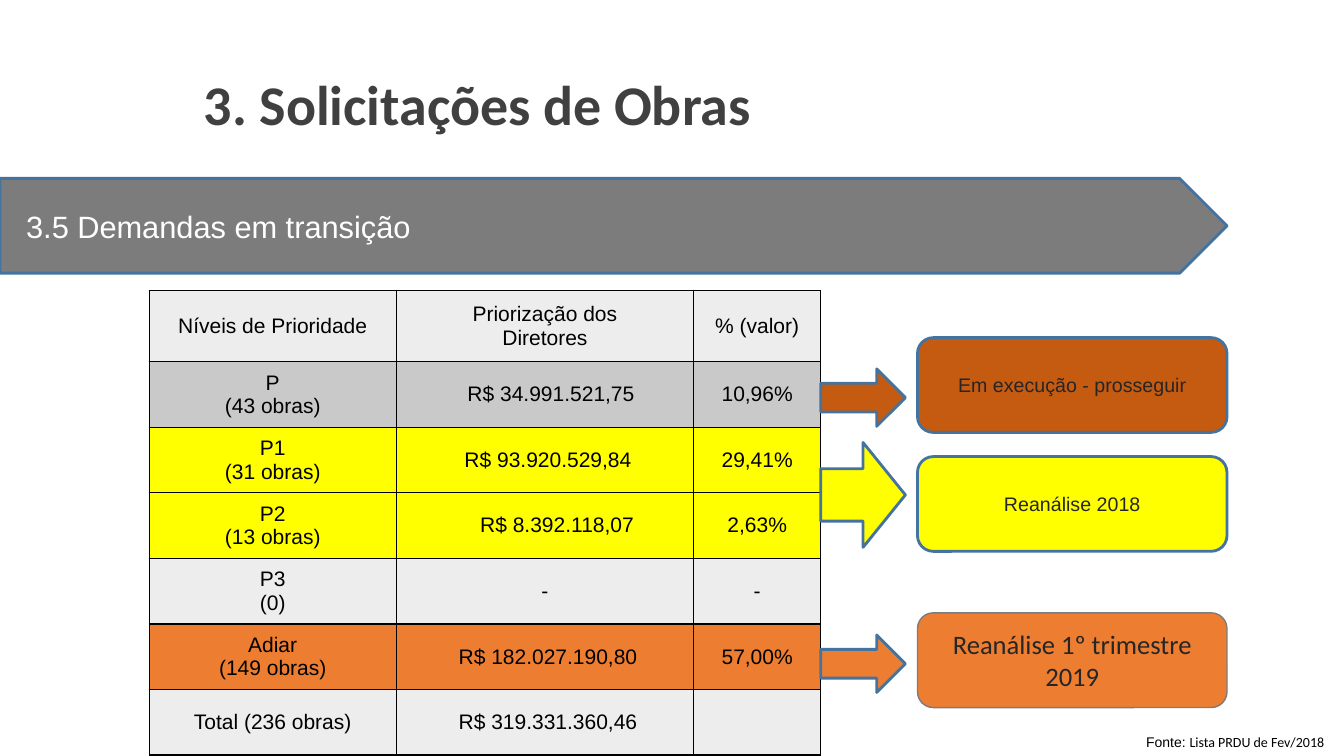
from lxml.etree import SubElement
from pptx import Presentation
from pptx.dml.color import RGBColor as RGB
from pptx.enum.shapes import MSO_SHAPE as SHAPE
from pptx.enum.text import MSO_ANCHOR as ANCHOR, MSO_AUTO_SIZE as AUTO, PP_ALIGN as ALIGN
from pptx.oxml.ns import qn
from pptx.util import Inches, Pt

THEME = {
    "gray": "7C7C7C", "blue": "43739E", "white": "FFFFFF", "black": "000000",
    "dark": "262626", "heading": "404040", "light": "EDEDED", "silver": "C9C9C9",
    "yellow": "FFFF00", "orange": "ED7D31", "rust": "C55A11",
    "title": 40, "banner": 22, "long": 19, "cell": 15, "box": 14, "source": 10,
}
SANS, BODY = "Arial", "Calibri"


def write(tf, text, font, size, color, align=ALIGN.CENTER, bold=False):
    tf.text = text
    tf.word_wrap = True
    tf.vertical_anchor = ANCHOR.MIDDLE
    for p in tf.paragraphs:
        p.alignment = align
        for r in p.runs:
            style = {"name": font, "size": Pt(THEME[size]), "bold": bold}
            for key, value in style.items():
                setattr(r.font, key, value)
            r.font.color.rgb = RGB.from_string(THEME[color])


def add_block(kind, x, y, w, h, fill, line="blue", weight=2):
    sp = slide.shapes.add_shape(kind, Inches(x), Inches(y), Inches(w), Inches(h))
    sp.shadow.inherit = False
    sp.fill.solid()
    sp.fill.fore_color.rgb = RGB.from_string(THEME[fill])
    sp.line.color.rgb = RGB.from_string(THEME[line])
    sp.line.width = Pt(weight)
    return sp


prs = Presentation()
prs.slide_width, prs.slide_height = Inches(13.33), Inches(7.5)
slide = prs.slides.add_slide(prs.slide_layouts[5])

# Title and section banner
title = slide.shapes.title
place = {"left": 1.92, "top": 0.74, "width": 8.6, "height": 0.86}
for key, value in place.items():
    setattr(title, key, Inches(value))
tf = title.text_frame
write(tf, "3. Solicitações de Obras", BODY, "title", "heading", ALIGN.LEFT, True)
tf.auto_size = AUTO.NONE
tf.margin_top, tf.margin_bottom = 0, Inches(0.3)

BLOCK_H, RIGHT = 0.94, 12.17
banner = add_block(SHAPE.PENTAGON, 0, 1.77, RIGHT, BLOCK_H, "gray")
write(banner.text_frame, "3.5 Demandas em transição", SANS, "banner", "white", ALIGN.LEFT)
banner.text_frame.margin_left = Inches(0.26)

# Priority table: fill, left inset of the value, texts
rows = [
    ("light", 0, "Níveis de Prioridade", "Priorização dos\nDiretores", "% (valor)"),
    ("silver", 0.12, "P\n(43 obras)", "R$ 34.991.521,75", "10,96%"),
    ("yellow", 0.06, "P1\n(31 obras)", "R$ 93.920.529,84", "29,41%"),
    ("yellow", 0.24, "P2\n(13 obras)", "R$ 8.392.118,07", "2,63%"),
    ("light", 0, "P3\n(0)", "-", "-"),
    ("orange", 0.06, "Adiar\n(149 obras)", "R$ 182.027.190,80", "57,00%"),
    ("light", 0.06, "Total (236 obras)", "R$ 319.331.360,46", ""),
]
COL_W, HEAD_H, ROW_H = (2.45, 2.95, 1.26), 0.71, 0.65
TABLE_X, TABLE_Y = 1.48, 2.88
TABLE_W, TABLE_H = sum(COL_W), HEAD_H + ROW_H * (len(rows) - 1)
frame = slide.shapes.add_table(len(rows), len(COL_W), Inches(TABLE_X), Inches(TABLE_Y),
                               Inches(TABLE_W), Inches(TABLE_H))
table = frame.table
for col, w in zip(table.columns, COL_W):
    col.width = Inches(w)
for i, (fill, inset, *texts) in enumerate(rows):
    table.rows[i].height = Inches(ROW_H if i else HEAD_H)
    for j, text in enumerate(texts):
        cell = table.cell(i, j)
        write(cell.text_frame, text, SANS, "cell", "black")
        cell.vertical_anchor = ANCHOR.MIDDLE
        for side in ("left", "right", "top", "bottom"):
            setattr(cell, f"margin_{side}", 0)
        if j == 1:
            cell.margin_left = Inches(inset)
        tc_pr = cell._tc.get_or_add_tcPr()
        for edge in ("lnL", "lnR", "lnT", "lnB"):
            ln = SubElement(tc_pr, qn(f"a:{edge}"), w=str(Pt(1)))
            SubElement(SubElement(ln, qn("a:solidFill")), qn("a:srgbClr"), val=THEME["black"])
        cell.fill.solid()
        cell.fill.fore_color.rgb = RGB.from_string(THEME[fill])

# Source note
note = slide.shapes.add_textbox(Inches(11.17), Inches(7.23), Inches(2.16), Inches(0.27))
write(note.text_frame, "Fonte: ", SANS, "source", "black")
r = note.text_frame.paragraphs[0].add_run()
r.text = "Lista PRDU de Fev/2018"
r.font.name, r.font.size = BODY, Pt(THEME["source"])
r.font.color.rgb = RGB.from_string(THEME["black"])

# Arrows lead from the table to the decision boxes
ARROW_X, ARROW_W, BOX_X = TABLE_X + TABLE_W, 0.84, 9.1
decisions = [
    ("rust", 3.66, 0.57, 3.35, "Em execução - prosseguir", SANS, "box", "blue", 2),
    ("yellow", 4.39, 1.04, 4.53, "Reanálise 2018", SANS, "box", "blue", 2),
    ("orange", 6.3, 0.57, 6.08, "Reanálise 1º trimestre 2019", BODY, "long", "gray", 1),
]
for fill, arrow_y, arrow_h, box_y, text, font, size, line, weight in decisions:
    add_block(SHAPE.RIGHT_ARROW, ARROW_X, arrow_y, ARROW_W, arrow_h, fill)
    box = add_block(SHAPE.ROUNDED_RECTANGLE, BOX_X, box_y, RIGHT - BOX_X, BLOCK_H,
                    fill, line, weight)
    write(box.text_frame, text, font, size, "dark")

prs.save("out.pptx")
